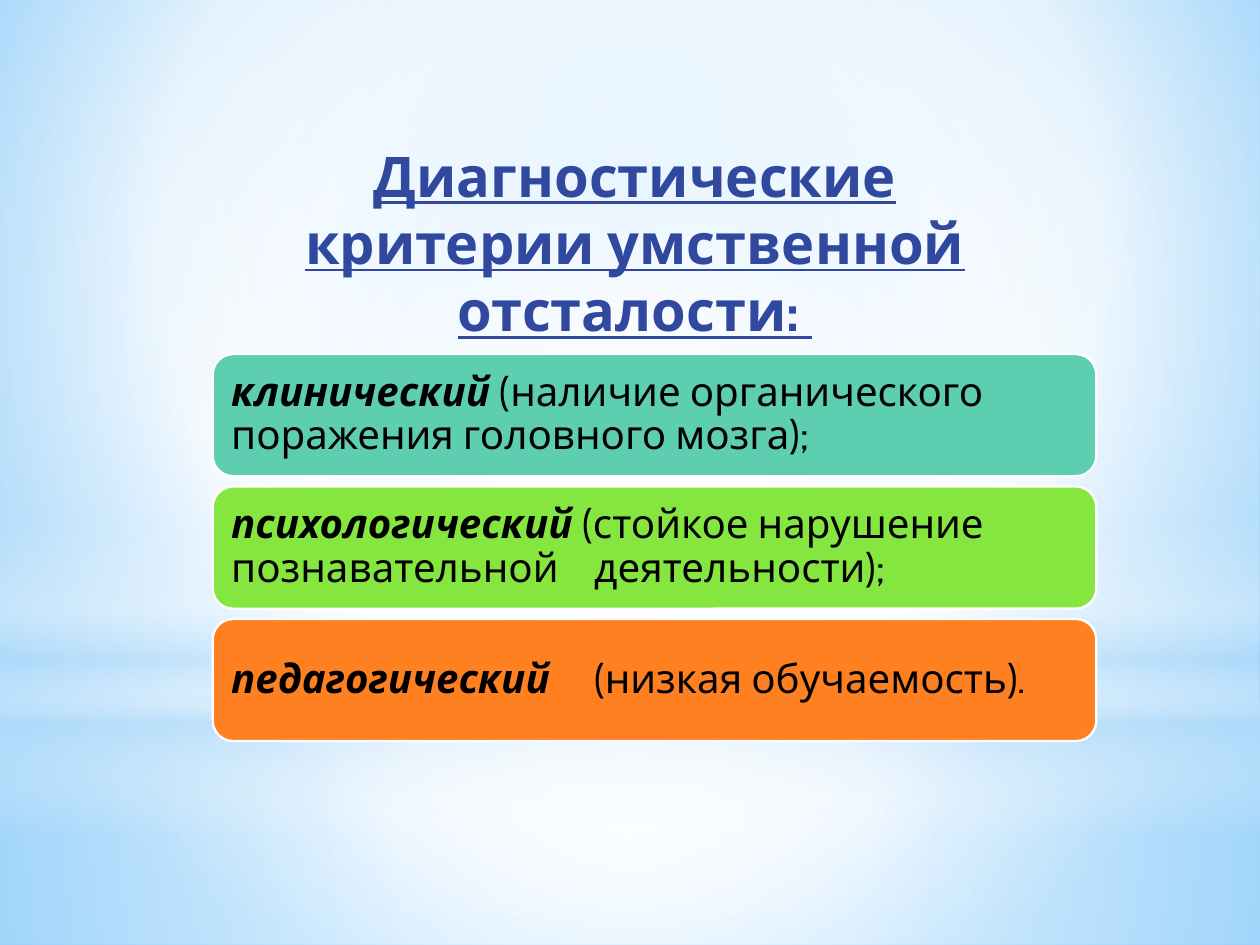
from lxml import etree
from pptx import Presentation
from pptx.dml.color import RGBColor
from pptx.enum.shapes import MSO_SHAPE
from pptx.enum.text import MSO_ANCHOR, MSO_AUTO_SIZE, PP_ALIGN
from pptx.oxml.ns import qn
from pptx.util import Cm, Pt

RECT, OVAL, ROUNDED = MSO_SHAPE.RECTANGLE, MSO_SHAPE.OVAL, MSO_SHAPE.ROUNDED_RECTANGLE
TOP, MIDDLE = MSO_ANCHOR.TOP, MSO_ANCHOR.MIDDLE
LEFT, CENTER = PP_ALIGN.LEFT, PP_ALIGN.CENTER
NO_AUTOFIT = MSO_AUTO_SIZE.NONE

FONT = "Cabin"
WIDTH, HEIGHT = 25.4, 19.05
HORIZON = 14.17
CENTRED = (50, 50, 50, 50)
TAB_STOP = 7.32

# Each criterion: fill, term, explanation
CRITERIA = [
    ("5DCEAF", "клинический ", "(наличие органического поражения головного мозга);"),
    ("86E640", "психологический", " (стойкое нарушение познавательной\tдеятельности);"),
    ("FF8021", "педагогический", "\t(низкая обучаемость)."),
]


def color(value):
    return RGBColor.from_string(value)


def add_text(p, text, size=23, hex_color="000000", bold=False, italic=False, underline=False):
    r = p.add_run()
    r.text = text
    f = r.font
    f.name, f.size, f.color.rgb = FONT, Pt(size), color(hex_color)
    f.bold, f.italic, f.underline = bold, italic, underline


def set_gradient(fill, holder, stops, focus=None):
    """Fill with (position, colour, opacity) stops, around a focus or downwards."""
    fill.solid()
    grad = etree.Element(qn("a:gradFill"), rotWithShape="1")
    stop_list = etree.SubElement(grad, qn("a:gsLst"))
    for position, value, opacity in stops:
        gs = etree.SubElement(stop_list, qn("a:gs"), pos=str(position * 1000))
        clr = etree.SubElement(gs, qn("a:srgbClr"), val=value)
        if opacity < 100:
            etree.SubElement(clr, qn("a:alpha"), val=str(opacity * 1000))
    if focus:
        circle = etree.SubElement(grad, qn("a:path"), path="circle")
        sides = {side: str(n * 1000) for side, n in zip("ltrb", focus)}
        etree.SubElement(circle, qn("a:fillToRect"), **sides)
    else:
        etree.SubElement(grad, qn("a:lin"), ang="5400000", scaled="0")
    holder.replace(holder.find(qn("a:solidFill")), grad)


def add_glow(s, kind, top, height, stops, focus=None):
    sp = s.shapes.add_shape(kind, 0, Cm(top), Cm(WIDTH), Cm(height))
    sp.shadow.inherit = False
    sp.line.fill.background()
    set_gradient(sp.fill, sp._element.spPr, stops, focus)


def add_backdrop(s):
    """Blue sky and water with a bright horizon."""
    fill = s.background.fill
    fill.solid()
    holder = next(s._element.iter(qn("p:bgPr")))
    set_gradient(fill, holder, [(0, "9ED5FF", 100), (60, "FFFFFF", 100), (100, "5BB9FF", 100)],
                 (20, 10, 20, 60))
    add_glow(s, RECT, HORIZON, HEIGHT - HORIZON,
             [(0, "FFFFFF", 91), (37, "FFFFFF", 76), (100, "B4DCFA", 79)], CENTRED)
    add_glow(s, RECT, 0, HORIZON,
             [(0, "FFFFFF", 89), (48, "FFFFFF", 62), (100, "B4DCFA", 79)], CENTRED)
    add_glow(s, RECT, 10.46, 6.35,
             [(0, "FFFFFF", 0), (29, "FFFFFF", 30), (45, "B4DCFA", 40),
              (55, "FFFFFF", 26), (65, "B4DCFA", 60), (100, "FFFFFF", 0)])
    add_glow(s, OVAL, 4.45, HORIZON, [(0, "FFFFFF", 100), (56, "FFFFFF", 0)], CENTRED)


def place_title(s, left, top, width, height):
    title = s.shapes.title
    s.shapes._spTree.append(title._element)  # in front of the backdrop
    title.left, title.top, title.width, title.height = map(Cm, (left, top, width, height))
    tf = title.text_frame
    tf.word_wrap, tf.auto_size, tf.vertical_anchor = True, NO_AUTOFIT, TOP
    p = tf.paragraphs[0]
    p.alignment = CENTER
    add_text(p, "Диагностические критерии умственной отсталости: ", size=32,
             hex_color="31489F", bold=True, underline=True)


def add_criterion(s, left, top, width, height, fill, term, explanation):
    sp = s.shapes.add_shape(ROUNDED, Cm(left), Cm(top), Cm(width), Cm(height))
    sp.shadow.inherit = False
    sp.fill.solid()
    sp.fill.fore_color.rgb = color(fill)
    sp.line.color.rgb = color("FFFFFF")
    sp.line.width = Pt(1.25)
    tf = sp.text_frame
    tf.word_wrap, tf.vertical_anchor = True, MIDDLE
    tf.margin_left = tf.margin_right = tf.margin_top = tf.margin_bottom = Cm(0.25)
    p = tf.paragraphs[0]
    p.alignment, p.line_spacing = LEFT, 0.9
    tabs = etree.SubElement(p._p.get_or_add_pPr(), qn("a:tabLst"))
    etree.SubElement(tabs, qn("a:tab"), pos=str(Cm(TAB_STOP)), algn="l")
    add_text(p, term, bold=True, italic=True)
    add_text(p, explanation)


def add_criteria(s, left, top, width, height, gap=0.21):
    row_height = (height - gap * (len(CRITERIA) - 1)) / len(CRITERIA)
    for i, criterion in enumerate(CRITERIA):
        add_criterion(s, left, top + i * (row_height + gap), width, row_height, *criterion)


def main():
    prs = Presentation()
    prs.slide_width, prs.slide_height = Cm(WIDTH), Cm(HEIGHT)
    s = prs.slides.add_slide(prs.slide_layouts.get_by_name("Title Only"))
    add_backdrop(s)
    place_title(s, 4.9, 2.72, 15.8, 4.37)
    add_criteria(s, 4.29, 7.14, 17.81, 7.8)
    prs.save("out.pptx")


if __name__ == "__main__":
    main()
